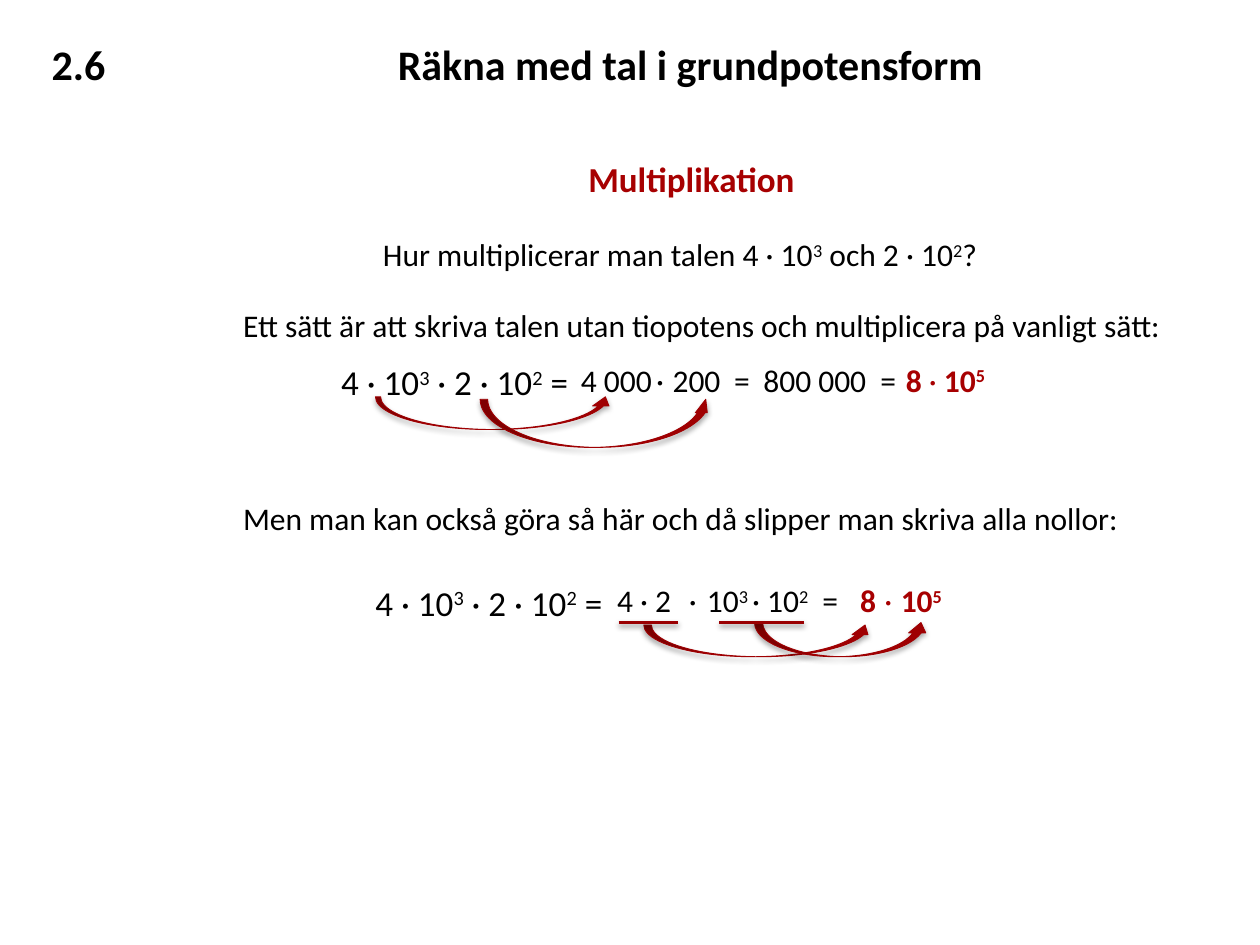
import pptx
import pptx.util
import pptx.dml.color
import pptx.enum.shapes
import pptx.oxml
import pptx.oxml.ns
from pptx.util import Cm

BLACK = pptx.dml.color.RGBColor(0x00, 0x00, 0x00)
RED = pptx.dml.color.RGBColor(0xA7, 0x00, 0x01)
ARROW_RED = pptx.dml.color.RGBColor(0x9F, 0x00, 0x02)
LINE_RED = pptx.dml.color.RGBColor(0x9A, 0x00, 0x02)

STYLES = {
    "title": (24, BLACK, True, 1.27),
    "heading": (20, RED, True, 1.12),
    "task": (20, BLACK, False, 1.12),
    "body": (18, BLACK, False, 1.02),
    "result": (18, RED, True, 1.02),
}
PRODUCT = "4 · 10^3| · 2 · 10^2| ="
FIRST_ROW, SECOND_ROW = 7.15, 11.59

TEXTS = [
    ("2.6", "title", 0.79, 0.66, 2),
    ("Räkna med tal i grundpotensform", "title", 7.77, 0.66, 17.43),
    ("Multiplikation", "heading", 11.61, 3.05, 5.31),
    ("Hur multiplicerar man talen 4 · 10^3| och 2 · 10^2|?", "body", 7.47, 4.62, 13),
    ("Ett sätt är att skriva talen utan tiopotens och multiplicera på vanligt sätt:",
     "body", 4.65, 6.05, 19.41),
    (PRODUCT, "task", 6.63, FIRST_ROW, 6.68),
    ("4 000", "body", 11.46, FIRST_ROW, 1.96),
    ("·", "body", 12.98, FIRST_ROW, 0.69),
    ("200", "body", 13.31, FIRST_ROW, 1.5),
    ("=", "body", 14.55, FIRST_ROW, 0.8),
    ("800 000", "body", 15.14, FIRST_ROW, 2.7),
    ("=", "body", 17.5, FIRST_ROW, 0.8),
    ("8 |· |10^5", "result", 18.01, FIRST_ROW, 2.46),
    ("Men man kan också göra så här och då slipper man skriva alla nollor:",
     "body", 4.65, 9.93, 18.36),
    (PRODUCT, "task", 7.32, SECOND_ROW, 6.68),
    ("4 · 2", "body", 12.19, SECOND_ROW, 1.63),
    ("·", "body", 13.64, SECOND_ROW, 0.69),
    ("10^3 |· 10^2", "body", 14, SECOND_ROW, 2.7),
    ("=", "body", 16.33, SECOND_ROW, 0.8),
    ("8", "result", 17.09, SECOND_ROW, 0.71),
    ("·", "result", 17.58, SECOND_ROW, 0.69),
    ("10^5", "result", 17.91, SECOND_ROW, 1.37),
]

ARROWS = [
    ((7.57, 8, 4.8, 0.66), (0.157, 0.5, 0.281)),
    ((9.68, 8.05, 4.67, 0.97), (0.157, 0.25, 0.281)),
]
UNDERLINED_ARROWS = [
    ((12.98, 12.6, 4.62, 0.64), (12.47, 13.67)),
    ((15.21, 12.55, 3.53, 0.69), (14.5, 16.21)),
]
UNDERLINED_BENDS = (0.24, 0.5, 0.302)
UNDERLINE_TOP = 12.55


def add_text(shapes, text, style, left, top, width):
    size, color, bold, height = STYLES[style]
    frame = shapes.add_textbox(Cm(left), Cm(top), Cm(width), Cm(height)).text_frame
    frame.word_wrap = True
    paragraph = frame.paragraphs[0]
    for part in text.split("|"):
        base, _, exponent = part.partition("^")
        for words, raised in ((base, False), (exponent, True)):
            if not words:
                continue
            run = paragraph.add_run()
            run.text = words
            run.font.name = "Calibri"
            run.font.size = pptx.util.Pt(size)
            run.font.color.rgb = color
            run.font.bold = bold and "·" not in words
            if raised:
                run.font._element.set("baseline", "30000")


def add_shadow(shape, distance, opacity):
    effects = pptx.oxml.parse_xml(
        f'<a:effectLst {pptx.oxml.ns.nsdecls("a")}>'
        f'<a:outerShdw blurRad="40000" dist="{distance}" dir="5400000" rotWithShape="0">'
        f'<a:srgbClr val="000000"><a:alpha val="{opacity}000"/></a:srgbClr>'
        '</a:outerShdw></a:effectLst>')
    shape._element.spPr.append(effects)


def add_arrow(shapes, place, bends):
    arrow = shapes.add_shape(
        pptx.enum.shapes.MSO_SHAPE.CURVED_UP_ARROW, *map(Cm, place))
    for index, bend in enumerate(bends):
        arrow.adjustments[index] = bend
    arrow.fill.solid()
    arrow.fill.fore_color.rgb = ARROW_RED
    arrow.line.color.rgb = ARROW_RED
    arrow.line.width = pptx.util.Pt(0.5)
    add_shadow(arrow, 23000, 35)


def add_underline(shapes, start, end):
    underline = shapes.add_connector(
        pptx.enum.shapes.MSO_CONNECTOR.STRAIGHT,
        Cm(start), Cm(UNDERLINE_TOP), Cm(end), Cm(UNDERLINE_TOP))
    underline.line.color.rgb = LINE_RED
    underline.line.width = pptx.util.Pt(2)
    add_shadow(underline, 20000, 38)


def main():
    deck = pptx.Presentation()
    deck.slide_width, deck.slide_height = Cm(25.4), Cm(19.05)
    shapes = deck.slides.add_slide(deck.slide_layouts[6]).shapes
    for entry in TEXTS:
        add_text(shapes, *entry)
    for place, bends in ARROWS:
        add_arrow(shapes, place, bends)
    for place, (start, end) in UNDERLINED_ARROWS:
        group = shapes.add_group_shape()
        add_arrow(group.shapes, place, UNDERLINED_BENDS)
        add_underline(group.shapes, start, end)
    deck.save("out.pptx")


if __name__ == "__main__":
    main()
